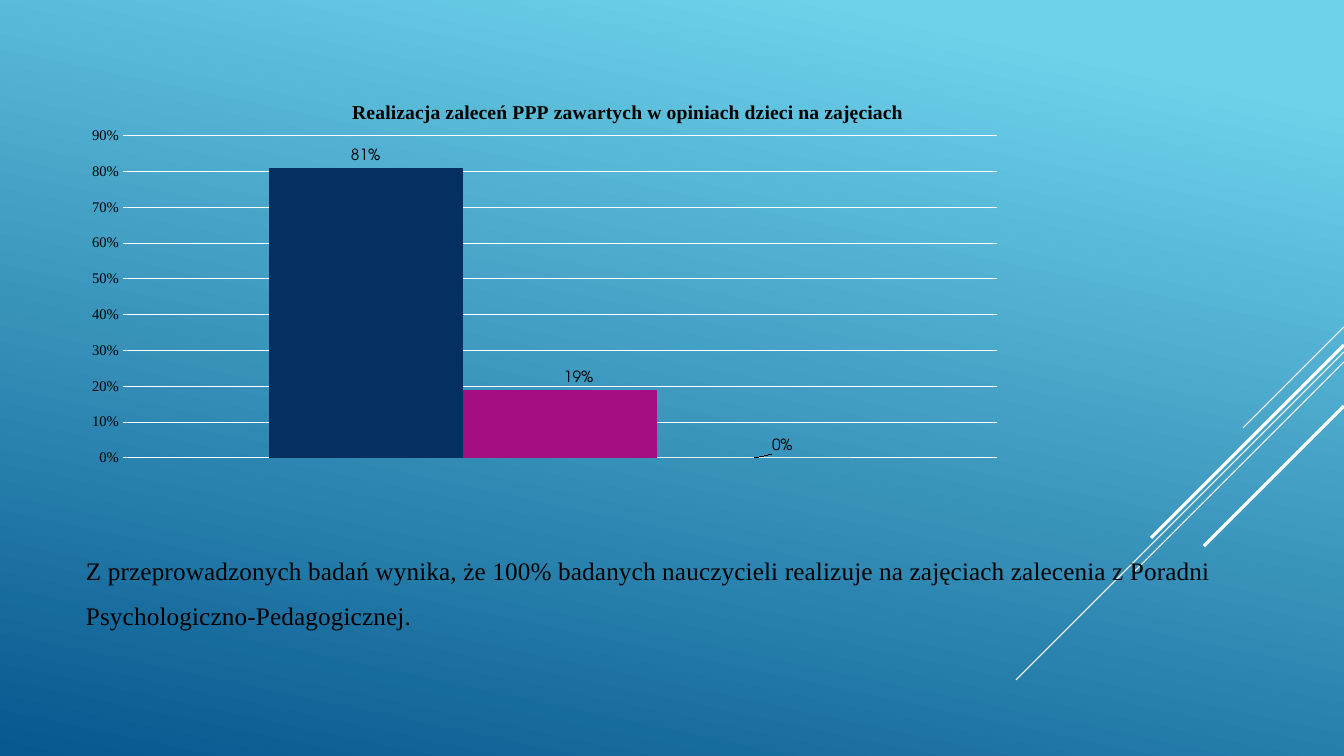
from dataclasses import dataclass

from lxml import etree
from pptx import Presentation
from pptx import util as u
from pptx.chart.data import CategoryChartData
from pptx.dml.color import RGBColor
from pptx.enum import chart as ch, shapes, text
from pptx.oxml import parse_xml
from pptx.oxml.ns import nsdecls, qn

SLIDE_W, SLIDE_H = 1344, 756
EMU_PER_PX = 12192000 / SLIDE_W


@dataclass(frozen=True)
class Theme:
    serif: str = "Times New Roman"
    sans: str = "TeX Gyre Adventor"
    ink: str = "000000"
    line: str = "FFFFFF"
    sky: str = "6ED2EB"
    deep: str = "06588E"
    series: tuple = ("052F61", "A50E82", "14967C")
    body_pt: float = 18
    title_pt: float = 14
    label_pt: float = 11
    axis_pt: float = 10.5
    thin_pt: float = 0.75
    thick_pt: float = 2.25


def px(n):
    return u.Emu(round(n * EMU_PER_PX))


def rgb(code):
    return RGBColor.from_string(code)


def style_font(font, name, size, color, bold=False):
    font.name, font.size, font.bold = name, u.Pt(size), bold
    font.color.rgb = rgb(color)


def set_layout(parent, index, **values):
    """Give a chart part a manual layout, as fractions of the chart."""
    for old in parent.findall(qn("c:layout")):
        parent.remove(old)
    layout = parse_xml(f"<c:layout {nsdecls('c')}><c:manualLayout/></c:layout>")
    for tag, val in values.items():
        etree.SubElement(layout[0], qn(f"c:{tag}")).set("val", str(val))
    parent.insert(index, layout)


class Deck:
    def __init__(self, theme):
        self.theme = theme
        self.prs = Presentation()
        self.prs.slide_width, self.prs.slide_height = px(SLIDE_W), px(SLIDE_H)
        self.s = self.prs.slides.add_slide(self.prs.slide_layouts[6])

    def background(self, angle):
        fill = self.s.background.fill
        fill.gradient()
        fill.gradient_angle = 360 - angle
        stops = ((0.1, self.theme.sky), (1, self.theme.deep))
        for stop, (position, color) in zip(fill.gradient_stops, stops):
            stop.position, stop.color.rgb = position, rgb(color)

    def diagonal(self, top, run, width):
        """Draw a 45° line down and left from the right edge of the slide."""
        c = self.s.shapes.add_connector(
            shapes.MSO_CONNECTOR.STRAIGHT,
            px(SLIDE_W), px(top), px(SLIDE_W - run), px(top + run))
        c.line.color.rgb, c.line.width = rgb(self.theme.line), u.Pt(width)
        etree.SubElement(c._element.spPr, qn("a:effectLst"))

    def text(self, content, x, y, w, h, size, spacing=1.0, tracking=0):
        tf = self.s.shapes.add_textbox(px(x), px(y), px(w), px(h)).text_frame
        tf.word_wrap = True
        tf.vertical_anchor = text.MSO_ANCHOR.MIDDLE
        p = tf.paragraphs[0]
        p.line_spacing = spacing
        r = p.add_run()
        r.text = content
        style_font(r.font, self.theme.serif, size, self.theme.ink)
        r.font._element.set("spc", str(tracking))

    def column_chart(self, title, values, label_shifts, x, y, w, h):
        t = self.theme
        data = CategoryChartData(number_format="0%")
        data.categories = ["1"]
        for i, value in enumerate(values, 1):
            data.add_series(f"Series {i}", [value])
        chart = self.s.shapes.add_chart(
            ch.XL_CHART_TYPE.COLUMN_CLUSTERED,
            px(x), px(y), px(w), px(h), data).chart
        style_font(chart.font, t.sans, 10, t.line)
        chart.has_legend = False

        chart.has_title = True
        p = chart.chart_title.text_frame.paragraphs[0]
        r = p.add_run()
        r.text = title
        style_font(r.font, t.serif, t.title_pt, t.ink, bold=True)
        set_layout(chart.chart_title._element, 1,
                   xMode="edge", yMode="edge", x=0.29, y=0.05)
        set_layout(chart._chartSpace.chart.plotArea, 0, layoutTarget="inner",
                   xMode="edge", yMode="edge", x=0.05, y=0.15, w=0.93, h=0.81)

        self.axes(chart)
        plot = chart.plots[0]
        plot.gap_width, plot.overlap, plot.vary_by_categories = 150, 0, False
        for series, color, shift in zip(plot.series, t.series, label_shifts):
            series.format.fill.solid()
            series.format.fill.fore_color.rgb = rgb(color)
            label = series.points[0].data_label
            style_font(label.font, t.sans, t.label_pt, t.ink)
            label.position = ch.XL_LABEL_POSITION.OUTSIDE_END
            if shift:
                set_layout(series._element.find(".//" + qn("c:dLbl")), 1,
                           x=shift, y=0)

    def axes(self, chart):
        t = self.theme
        chart.category_axis.visible = False
        axis = chart.value_axis
        axis.minimum_scale, axis.maximum_scale, axis.major_unit = 0, 0.9, 0.1
        axis.major_tick_mark = axis.minor_tick_mark = ch.XL_TICK_MARK.NONE
        axis.format.line.fill.background()
        axis.tick_labels.number_format = "0%"
        axis.tick_labels.number_format_is_linked = False
        style_font(axis.tick_labels.font, t.serif, t.axis_pt, t.ink)
        grid = axis.major_gridlines.format.line
        grid.color.rgb, grid.width = rgb(t.line), u.Pt(t.thin_pt)


def main():
    theme = Theme()
    deck = Deck(theme)
    deck.background(angle=102)
    for top, run, width in (
            (327, 101, theme.thin_pt), (352, 328, theme.thin_pt),
            (362, 209, theme.thin_pt), (345, 193, theme.thick_pt),
            (406, 140, theme.thick_pt)):
        deck.diagonal(top, run, width)
    deck.text("Z przeprowadzonych badań wynika, że 100% badanych nauczycieli "
              "realizuje na zajęciach zalecenia z Poradni "
              "Psychologiczno-Pedagogicznej.",
              76, 495, 1219, 181, theme.body_pt, spacing=1.5, tracking=10)
    deck.column_chart(
        "Realizacja zaleceń PPP zawartych w opiniach dzieci na zajęciach",
        values=(0.81, 0.19, 0), label_shifts=(0, 0.02, 0.03),
        x=76, y=76, w=940, h=398)
    deck.prs.save("out.pptx")


if __name__ == "__main__":
    main()
